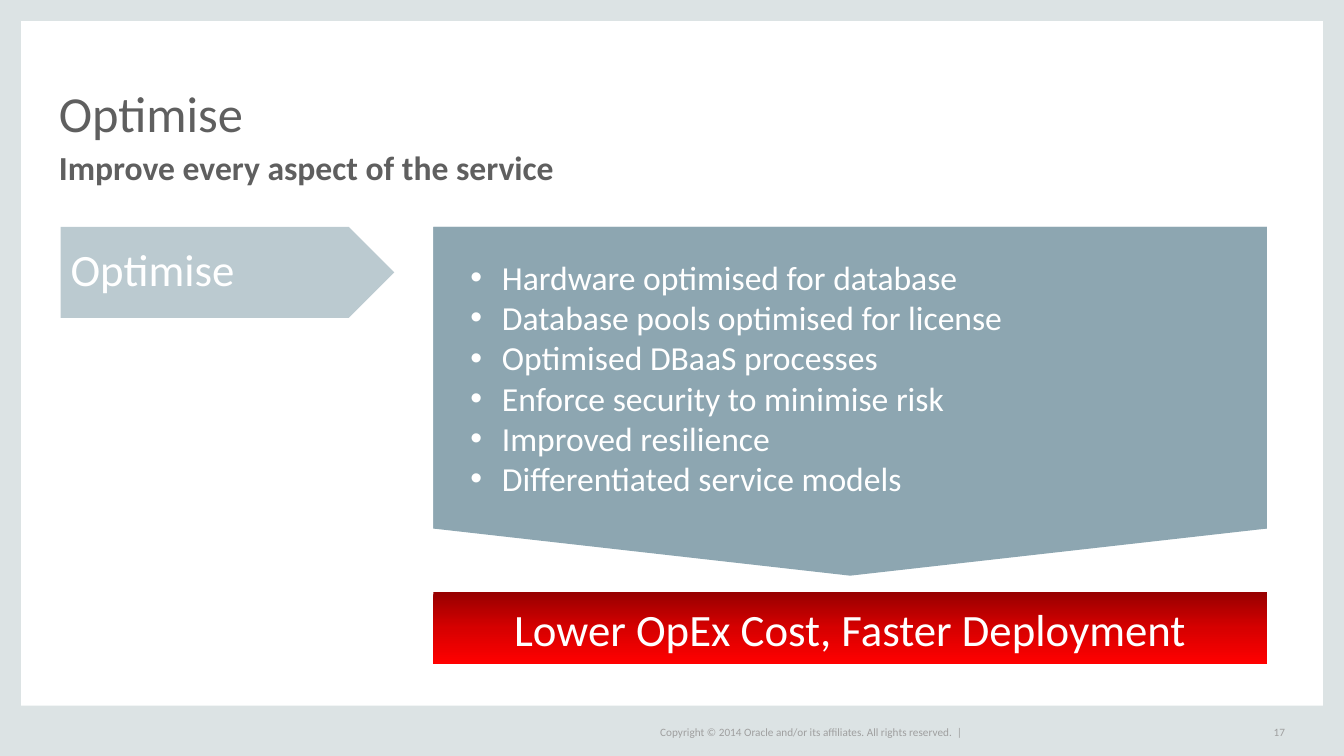
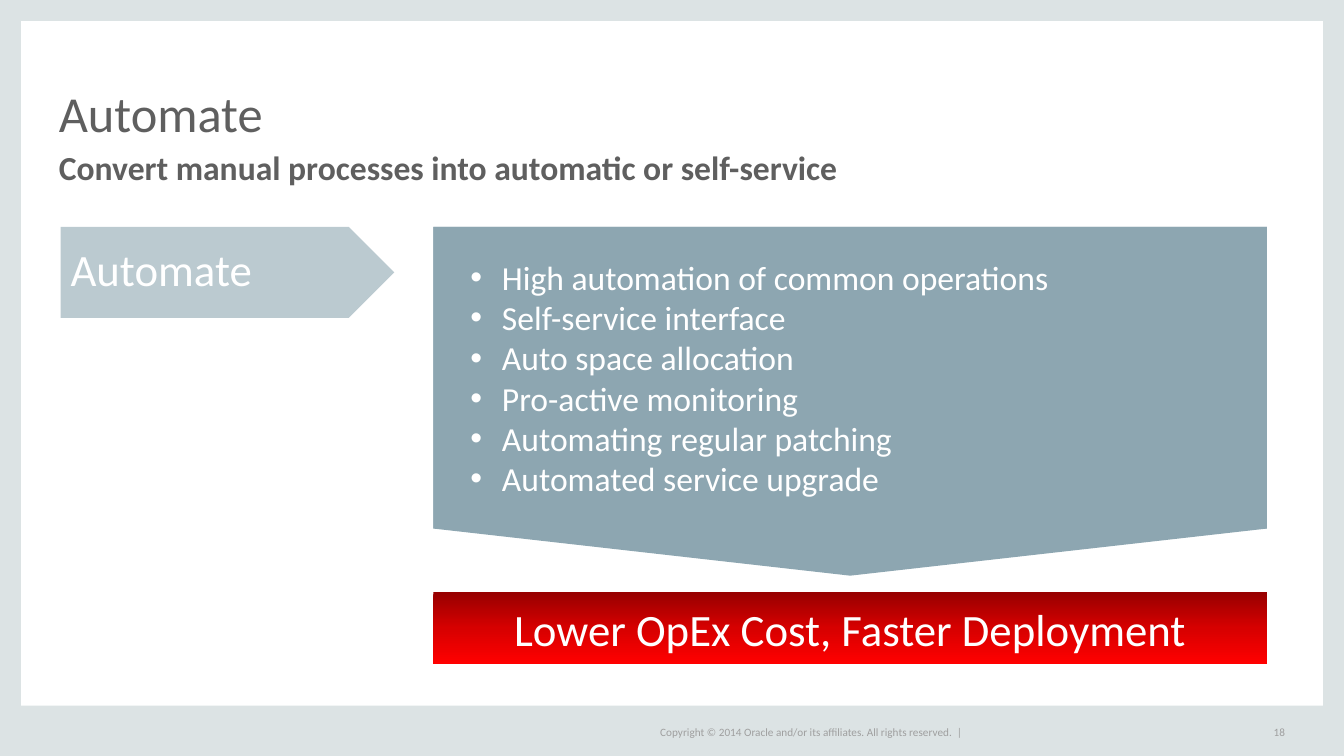
from lxml import etree
from pptx import Presentation
from pptx.dml.color import RGBColor
from pptx.enum.shapes import MSO_SHAPE
from pptx.enum.text import MSO_ANCHOR, MSO_AUTO_SIZE, PP_ALIGN
from pptx.oxml.ns import qn
from pptx.util import Pt

RECTANGLE = MSO_SHAPE.RECTANGLE
DOWN_ARROW = MSO_SHAPE.DOWN_ARROW
PENTAGON = MSO_SHAPE.PENTAGON
TOP, MIDDLE, BOTTOM = MSO_ANCHOR.TOP, MSO_ANCHOR.MIDDLE, MSO_ANCHOR.BOTTOM
LEFT, CENTER, RIGHT = PP_ALIGN.LEFT, PP_ALIGN.CENTER, PP_ALIGN.RIGHT
NO_AUTOFIT = MSO_AUTO_SIZE.NONE

# Content
FIRST_NUMBER = 17
COPYRIGHT = "Copyright © 2014 Oracle and/or its affiliates. All rights reserved.  |"
OUTCOME = "Lower OpEx Cost, Faster Deployment"
STAGES = [
    {
        "name": "Optimise",
        "aim": "Improve every aspect of the service",
        "points": [
            "Hardware optimised for database",
            "Database pools optimised for license",
            "Optimised DBaaS processes",
            "Enforce security to minimise risk",
            "Improved resilience",
            "Differentiated service models",
        ],
    },
    {
        "name": "Automate",
        "aim": "Convert manual processes into automatic or self-service",
        "points": [
            "High automation of common operations",
            "Self-service interface",
            "Auto space allocation",
            "Pro-active monitoring",
            "Automating regular patching",
            "Automated service upgrade",
        ],
    },
]

# Shared style, lengths in points
FONT = "Calibri"
FRAME, HEADING, FOOTER = "DCE3E4", "5F5F5F", "9F9F9F"
PANEL, TAG, WHITE = "8DA6B1", "BBCAD0", "FFFFFF"
OUTCOME_STOPS = [(0, "970000"), (50, "D70000"), (100, "FF0000")]
WIDTH, HEIGHT = 960, 540
BORDER, FOOTER_HEIGHT = 15, 36
MARGIN, HEADING_WIDTH = 42, 876
FOOTER_TOP, FOOTER_LINE = 516, 14.4
PANEL_LEFT, PANEL_TOP, PANEL_WIDTH = 309.6, 162, 595.4
BULLET_INDENT, BULLET_HANG = 41.9, 22.5


def rgb(color):
    return RGBColor.from_string(color)


def place(shape, box):
    shape.left, shape.top, shape.width, shape.height = map(Pt, box)


def write(shape, lines, size, color, bold=False, align=LEFT, anchor=MIDDLE,
          spacing=None, inset=True, wrap=True, bullets=False):
    frame = shape.text_frame
    frame.word_wrap = wrap
    frame.auto_size = NO_AUTOFIT
    frame.vertical_anchor = anchor
    if not inset:
        frame.margin_left = frame.margin_right = 0
        frame.margin_top = frame.margin_bottom = 0
    for index, line in enumerate(lines):
        paragraph = frame.add_paragraph() if index else frame.paragraphs[0]
        paragraph.alignment = align
        if spacing:
            paragraph.line_spacing = spacing
        if bullets:
            add_bullet(paragraph, color)
        run = paragraph.add_run()
        run.text = line
        run.font.name, run.font.size, run.font.bold = FONT, Pt(size), bold
        run.font.color.rgb = rgb(color)


def add_bullet(paragraph, color):
    properties = paragraph._p.get_or_add_pPr()
    properties.set("marL", str(Pt(BULLET_INDENT)))
    properties.set("indent", str(-Pt(BULLET_HANG)))
    bullet_color = etree.SubElement(properties, qn("a:buClr"))
    etree.SubElement(bullet_color, qn("a:srgbClr"), val=color)
    etree.SubElement(properties, qn("a:buFont"), typeface="Arial")
    etree.SubElement(properties, qn("a:buChar"), char="•")


def add_block(shapes, preset, box, color):
    block = shapes.add_shape(preset, *map(Pt, box))
    block.shadow.inherit = False
    block.fill.solid()
    block.fill.fore_color.rgb = rgb(color)
    block.line.fill.background()
    return block


def add_label(slide, box, text, size, color, **style):
    label = slide.shapes.add_textbox(*map(Pt, box))
    write(label, [text], size, color, inset=False, **style)


def shade_downwards(block, stops):
    block.fill.gradient()
    block.fill.gradient_angle = 270
    stop_list = block.element.spPr.find(qn("a:gradFill")).find(qn("a:gsLst"))
    for old_stop in list(stop_list):
        stop_list.remove(old_stop)
    for percent, color in stops:
        stop = etree.SubElement(stop_list, qn("a:gs"), pos=str(percent * 1000))
        etree.SubElement(stop, qn("a:srgbClr"), val=color)


def add_frame(slide, number):
    bands = [
        (0, 0, BORDER, HEIGHT),
        (WIDTH - BORDER, 0, BORDER, HEIGHT),
        (0, HEIGHT - FOOTER_HEIGHT, WIDTH, FOOTER_HEIGHT),
        (0, 0, WIDTH, BORDER),
    ]
    for band in bands:
        add_block(slide.shapes, RECTANGLE, band, FRAME)
    add_label(slide, (471.6, FOOTER_TOP, 219.6, FOOTER_LINE), COPYRIGHT, 8,
              FOOTER, wrap=False)
    add_label(slide, (888, FOOTER_TOP, 30, FOOTER_LINE), str(number), 8,
              FOOTER, align=RIGHT)


def add_heading(slide, name, aim):
    title = slide.shapes.title
    place(title, (MARGIN, 31.7, HEADING_WIDTH, 70))
    write(title, [name], 36, HEADING, anchor=BOTTOM, spacing=0.8, inset=False)
    add_label(slide, (MARGIN, 108, HEADING_WIDTH, 27), aim, 24, HEADING,
              bold=True, anchor=TOP, spacing=0.9)


def add_panel(slide, points):
    panel = slide.shapes.add_group_shape()
    arrow = add_block(panel.shapes, DOWN_ARROW,
                      (PANEL_LEFT, PANEL_TOP, PANEL_WIDTH, 249.2), PANEL)
    arrow.adjustments[0] = 1
    arrow.adjustments[1] = 0.135
    body = add_block(panel.shapes, RECTANGLE,
                     (PANEL_LEFT, PANEL_TOP, PANEL_WIDTH, 215.5), PANEL)
    write(body, points, 24, WHITE, bullets=True)


def add_stage(prs, stage, number):
    slide = prs.slides.add_slide(prs.slide_layouts[5])
    add_frame(slide, number)
    add_heading(slide, stage["name"], stage["aim"])
    add_panel(slide, stage["points"])

    # Stage tag and outcome banner
    tag = add_block(slide.shapes, PENTAGON, (43.3, PANEL_TOP, 238.3, 65), TAG)
    write(tag, [stage["name"]], 32, WHITE, spacing=0.9)
    outcome = add_block(slide.shapes, RECTANGLE,
                        (PANEL_LEFT, 423.2, PANEL_WIDTH, 51.2), PANEL)
    shade_downwards(outcome, OUTCOME_STOPS)
    write(outcome, [OUTCOME], 32, WHITE, align=CENTER)


def main():
    prs = Presentation()
    prs.slide_width, prs.slide_height = Pt(WIDTH), Pt(HEIGHT)
    for number, stage in enumerate(STAGES, FIRST_NUMBER):
        add_stage(prs, stage, number)
    prs.save("out.pptx")


if __name__ == "__main__":
    main()
